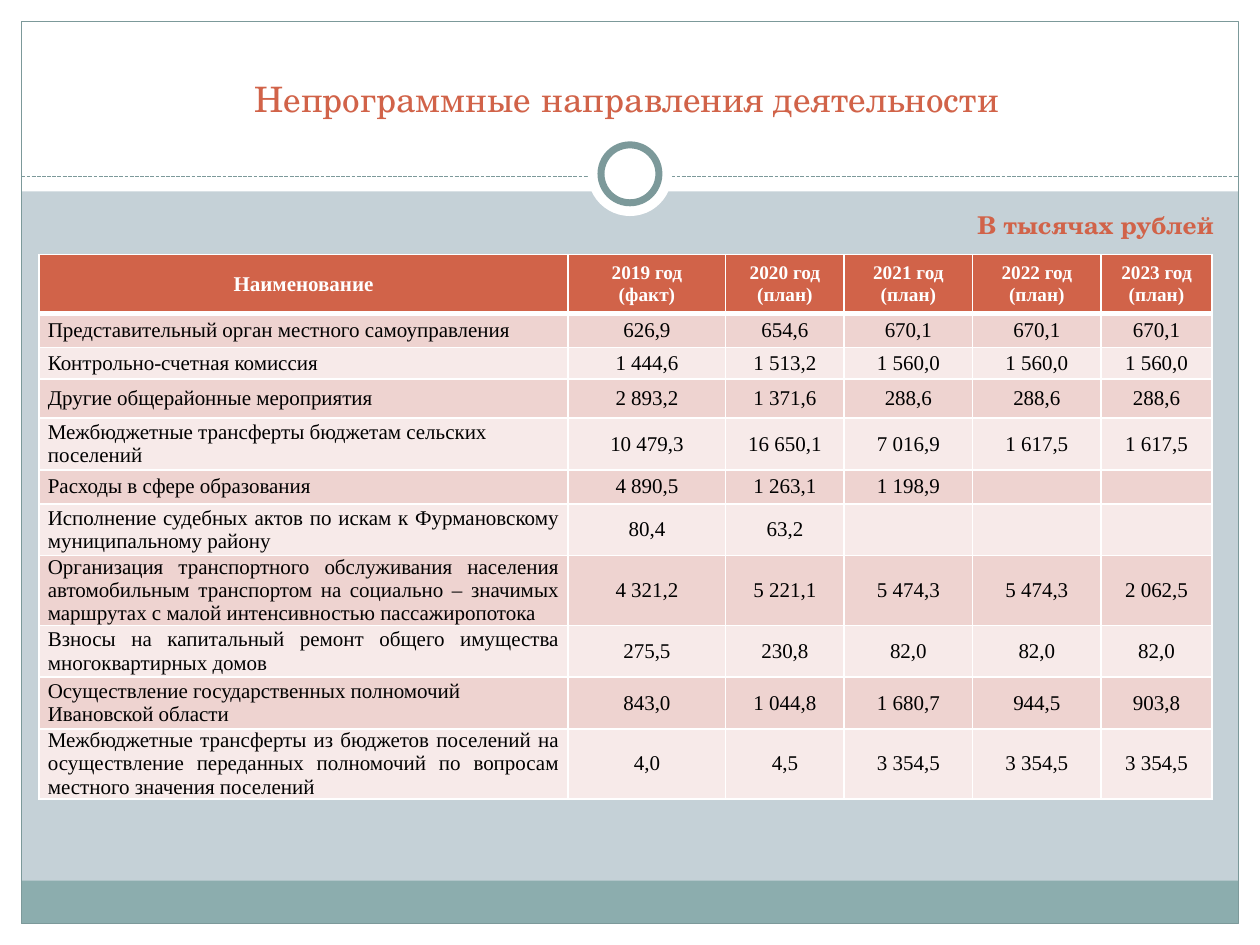
from lxml import etree
from pptx import Presentation
from pptx.dml.color import RGBColor
from pptx.enum.dml import MSO_LINE
from pptx.enum.shapes import MSO_CONNECTOR, MSO_SHAPE
from pptx.enum.text import MSO_ANCHOR, PP_ALIGN
from pptx.oxml.ns import qn
from pptx.util import Inches, Pt

RECT, OVAL = MSO_SHAPE.RECTANGLE, MSO_SHAPE.OVAL
STRAIGHT, DASH = MSO_CONNECTOR.STRAIGHT, MSO_LINE.SQUARE_DOT
LEFT, CENTER, JUSTIFY = PP_ALIGN.LEFT, PP_ALIGN.CENTER, PP_ALIGN.JUSTIFY
MIDDLE, BOTTOM = MSO_ANCHOR.MIDDLE, MSO_ANCHOR.BOTTOM

W, H, EDGE = 10, 7.5, 0.17
DISPLAY, BODY = "TeX Gyre Schola", "Times New Roman"
WHITE, BLACK, ACCENT, TEAL = "FFFFFF", "000000", "D16349", "7C999A"
BACKGROUND, FOOTER = "C5D1D7", "8CADAE"
BANDS = ("EED3D0", "F7EAE9")

COLS = (4.2, 1.25, 0.94, 1.02, 1.02, 0.88)
ROWS = (0.47, 0.27, 0.25, 0.31, 0.41, 0.27) + (0.41,) * 5
HEADER = ("Наименование", "2019 год\n(факт)") + tuple(
    f"{year} год\n(план)" for year in range(2020, 2024))
DATA = (
    (JUSTIFY, "Представительный орган местного самоуправления",
     "626,9", "654,6", "670,1", "670,1", "670,1"),
    (JUSTIFY, "Контрольно-счетная комиссия",
     "1 444,6", "1 513,2", "1 560,0", "1 560,0", "1 560,0"),
    (JUSTIFY, "Другие общерайонные мероприятия",
     "2 893,2", "1 371,6", "288,6", "288,6", "288,6"),
    (LEFT, "Межбюджетные трансферты бюджетам сельских поселений",
     "10 479,3", "16 650,1", "7 016,9", "1 617,5", "1 617,5"),
    (JUSTIFY, "Расходы в сфере образования",
     "4 890,5", "1 263,1", "1 198,9", "", ""),
    (JUSTIFY, "Исполнение судебных актов по искам к Фурмановскому "
     "муниципальному району", "80,4", "63,2", "", "", ""),
    (JUSTIFY, "Организация транспортного обслуживания населения "
     "автомобильным транспортом на социально – значимых маршрутах "
     "с малой интенсивностью пассажиропотока",
     "4 321,2", "5 221,1", "5 474,3", "5 474,3", "2 062,5"),
    (JUSTIFY, "Взносы на капитальный ремонт общего имущества "
     "многоквартирных домов", "275,5", "230,8", "82,0", "82,0", "82,0"),
    (LEFT, "Осуществление государственных полномочий Ивановской области",
     "843,0", "1 044,8", "1 680,7", "944,5", "903,8"),
    (JUSTIFY, "Межбюджетные трансферты из бюджетов поселений на "
     "осуществление переданных полномочий по вопросам местного "
     "значения поселений", "4,0", "4,5", "3 354,5", "3 354,5", "3 354,5"),
)


def color(value):
    """Turn a hex string into a colour."""
    return RGBColor.from_string(value)


def add_run(p, text, size, font, fill, bold=False):
    """Add one formatted run to a paragraph."""
    r = p.add_run()
    r.text = text
    r.font.size, r.font.name, r.font.bold = Pt(size), font, bold
    r.font.color.rgb = color(fill)


def add_block(s, kind, box, fill=None, line=None, width=0.75):
    """Add a flat preset shape in the box."""
    sp = s.shapes.add_shape(kind, *map(Inches, box))
    sp.shadow.inherit = False
    if fill:
        sp.fill.solid()
        sp.fill.fore_color.rgb = color(fill)
    else:
        sp.fill.background()
    if line:
        sp.line.color.rgb = color(line)
        sp.line.width = Pt(width)
    else:
        sp.line.fill.background()


def add_ring(s, cx, cy):
    """Draw the ring on its white disc around a centre."""
    for size, line in ((0.67, None), (0.46, TEAL)):
        box = (cx - size / 2, cy - size / 2, size, size)
        add_block(s, OVAL, box, WHITE, line, 4)


def add_frame(s, x, y, w, h):
    """Draw the white margins, footer band, outline, divider and ring."""
    head, band, divider = 1.52, 0.34, 1.4
    right, bottom = x + w - EDGE, y + h - EDGE
    inner = w - 2 * EDGE
    for box in ((x, bottom, w, EDGE), (x, y, w, head),
                (x, y, EDGE, h), (right, y, EDGE, h)):
        add_block(s, RECT, box, WHITE)
    add_block(s, RECT, (x + EDGE, bottom - band, inner, band), FOOTER)
    add_block(s, RECT, (x + EDGE, y + EDGE, inner, h - 2 * EDGE), line=TEAL)
    ln = s.shapes.add_connector(
        STRAIGHT, *map(Inches, (x + EDGE, y + divider, right, y + divider)))
    ln.line.color.rgb = color(TEAL)
    ln.line.width, ln.line.dash_style = Pt(0.75), DASH
    etree.SubElement(ln._element.spPr, qn("a:effectLst"))
    add_ring(s, x + w / 2, y + divider - 0.02)


def add_title(s, x, y, w, h):
    """Place the title placeholder above the frame and fill it."""
    sp = s.shapes.title
    s.shapes._spTree.append(sp._element)
    sp.left, sp.top, sp.width, sp.height = map(Inches, (x, y, w, h))
    tf = sp.text_frame
    tf.word_wrap, tf.vertical_anchor = True, BOTTOM
    p = tf.paragraphs[0]
    p.alignment = CENTER
    add_run(p, "Непрограммные направления деятельности", 20, DISPLAY, ACCENT)


def add_unit(s, x, y, w, h):
    """Add the unit of measure above the table."""
    tf = s.shapes.add_textbox(*map(Inches, (x, y, w, h))).text_frame
    tf.word_wrap = True
    add_run(tf.paragraphs[0], "В тысячах рублей", 14, DISPLAY, ACCENT, True)


def set_borders(cell, bottom):
    """Give a cell white borders, with its own bottom width."""
    tc_pr = cell._tc.get_or_add_tcPr()
    sides = (("lnL", 1), ("lnR", 1), ("lnT", 1), ("lnB", bottom))
    for i, (side, width) in enumerate(sides):
        ln = etree.Element(qn(f"a:{side}"), w=str(Pt(width)))
        fill = etree.SubElement(ln, qn("a:solidFill"))
        etree.SubElement(fill, qn("a:srgbClr"), val=WHITE)
        tc_pr.insert(i, ln)


def fill_cell(cell, text, size, ink, fill, align, bold=False, bottom=1):
    """Write and format one table cell."""
    cell.margin_left = cell.margin_right = Inches(0.07)
    cell.margin_top = cell.margin_bottom = 0
    cell.vertical_anchor = MIDDLE
    cell.fill.solid()
    cell.fill.fore_color.rgb = color(fill)
    set_borders(cell, bottom)
    tf = cell.text_frame
    for i, line in enumerate(text.split("\n")):
        p = tf.add_paragraph() if i else tf.paragraphs[0]
        p.alignment = align
        if line:
            add_run(p, line, size, BODY, ink, bold)
        else:
            etree.SubElement(p._p, qn("a:endParaRPr"), sz=str(size * 100))


def add_budget_table(s, x, y, w, h):
    """Add the budget table, scaling its columns and rows to the box."""
    table = s.shapes.add_table(
        len(ROWS), len(COLS), *map(Inches, (x, y, w, h))).table
    for col, share in zip(table.columns, COLS):
        col.width = Inches(w * share / sum(COLS))
    for row, share in zip(table.rows, ROWS):
        row.height = Inches(h * share / sum(ROWS))
    for c, text in enumerate(HEADER):
        fill_cell(table.cell(0, c), text, 11 if c else 12, WHITE, ACCENT,
                  CENTER, True, 3)
    for r, (align, *texts) in enumerate(DATA, 1):
        for c, text in enumerate(texts):
            fill_cell(table.cell(r, c), text, 12, BLACK, BANDS[(r - 1) % 2],
                      CENTER if c else align)


def main():
    """Build the slide and save it."""
    prs = Presentation()
    prs.slide_width, prs.slide_height = Inches(W), Inches(H)
    s = prs.slides.add_slide(prs.slide_layouts[5])
    s.background.fill.solid()
    s.background.fill.fore_color.rgb = color(BACKGROUND)
    add_frame(s, 0, 0, W, H)
    add_budget_table(s, 0.31, 2.02, sum(COLS), sum(ROWS))
    add_title(s, 0.31, 0.47, 9.33, 0.53)
    add_unit(s, 7.66, 1.62, 2.27, 0.3)
    prs.save("out.pptx")


if __name__ == "__main__":
    main()
